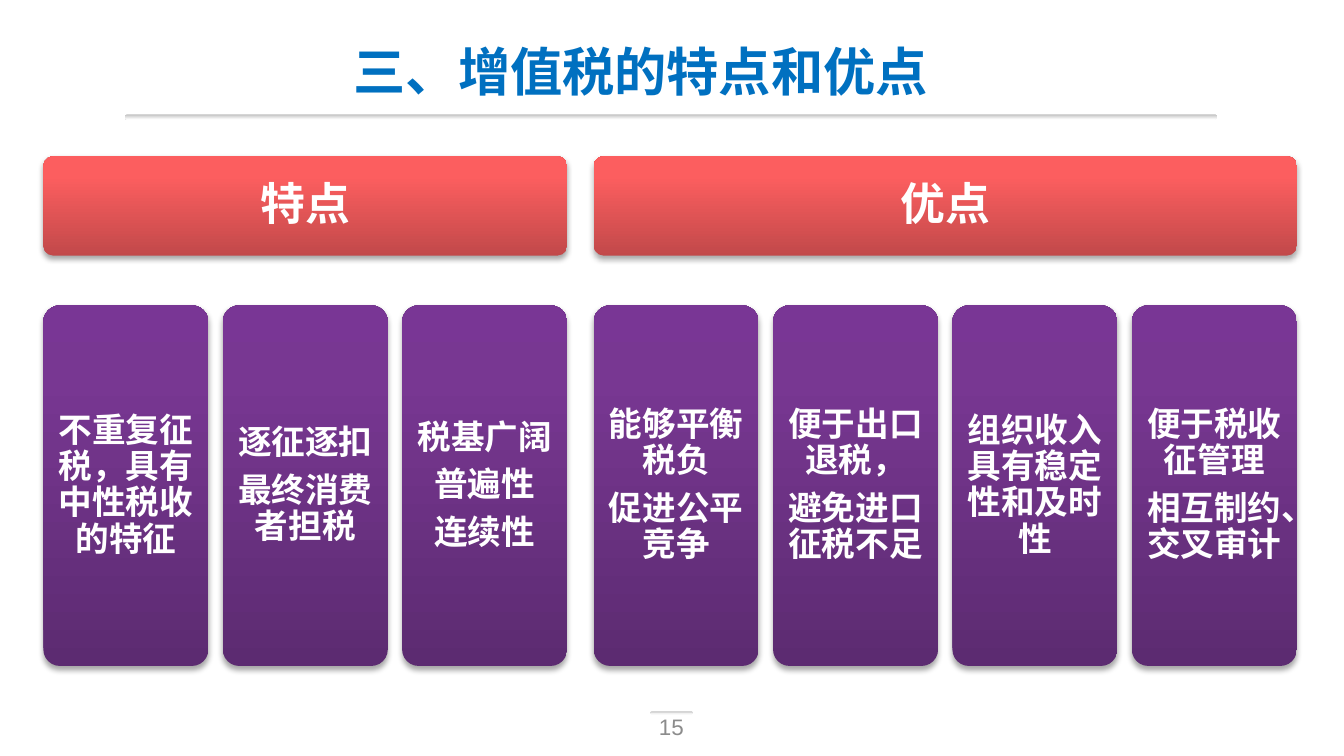
from dataclasses import dataclass

from lxml import etree
from pptx import Presentation
from pptx import util as u
from pptx.dml.color import RGBColor
from pptx.enum import shapes, text
from pptx.oxml import ns

Cm, Pt = u.Cm, u.Pt

BLUE = RGBColor(0x00, 0x70, 0xC0)
WHITE = RGBColor(0xFF, 0xFF, 0xFF)
GREY = RGBColor(0x8C, 0x8C, 0x8C)
BLACK = RGBColor(0x00, 0x00, 0x00)
RULE_GREY = RGBColor(0xBF, 0xBF, 0xBF)
RED_STOPS = ((0, RGBColor(0xC2, 0x49, 0x4A)), (80, RGBColor(0xFC, 0x5E, 0x5F)),
             (100, RGBColor(0xFF, 0x5D, 0x5E)))
PURPLE_STOPS = ((0, RGBColor(0x5C, 0x2B, 0x71)), (80, RGBColor(0x78, 0x37, 0x92)),
                (100, RGBColor(0x79, 0x36, 0x95)))
RULE_STOPS = ((0, RULE_GREY), (100, WHITE))
UPWARD, DOWNWARD = 270, 90

CARD_FONT = "Noto Sans CJK SC"
PLAIN_FONT = "Arial"

# Grid in centimetres
LEFT, GROUP_GAP = 0.82, 0.5
CARD_WIDTH, CARD_GAP = 3.12, 0.27
HEADER_TOP, HEADER_HEIGHT = 2.95, 1.88
CARD_TOP, CARD_HEIGHT = 5.77, 6.81


@dataclass
class Box:
    left: float
    top: float
    width: float
    height: float

    def lengths(self) -> tuple:
        return Cm(self.left), Cm(self.top), Cm(self.width), Cm(self.height)


@dataclass
class TextStyle:
    size: int
    color: RGBColor
    font: str = PLAIN_FONT
    bold: bool = False
    line_spacing: float = 1.0
    space_after: float = 0


@dataclass
class Group:
    header: str
    cards: list


HEADER_STYLE = TextStyle(24, WHITE, CARD_FONT, True, 0.9)
CARD_STYLE = TextStyle(18, WHITE, CARD_FONT, True, 0.9, 6)

GROUPS = [
    Group("特点", [
        ["不重复征税，具有中性税收的特征"],
        ["逐征逐扣", "最终消费者担税"],
        ["税基广阔", "普遍性", "连续性"],
    ]),
    Group("优点", [
        ["能够平衡税负", "促进公平竞争"],
        ["便于出口退税，", "避免进口征税不足"],
        ["组织收入具有稳定性和及时性"],
        ["便于税收征管理", "相互制约、交叉审计"],
    ]),
]


def add_element(parent, tag: str, **attributes):
    return etree.SubElement(parent, ns.qn(tag), {k: str(v) for k, v in attributes.items()})


def set_gradient(shape, stops: tuple, angle: int) -> None:
    shape.fill.gradient()
    gradient = shape._element.spPr.find(ns.qn("a:gradFill"))
    for child in list(gradient):
        gradient.remove(child)
    stop_list = add_element(gradient, "a:gsLst")
    for position, color in stops:
        stop = add_element(stop_list, "a:gs", pos=position * 1000)
        add_element(stop, "a:srgbClr", val=color)
    add_element(gradient, "a:lin", ang=angle * 60000, scaled=0)


def add_shadow(shape) -> None:
    effects = shape._element.spPr.find(ns.qn("a:effectLst"))
    shadow = add_element(effects, "a:outerShdw", blurRad=Pt(3.1), dist=Pt(1.8),
                         dir=90 * 60000, rotWithShape=0)
    color = add_element(shadow, "a:srgbClr", val=BLACK)
    add_element(color, "a:alpha", val=35000)


def add_round_box(slide, box: Box, stops: tuple, angle: int, corner: float):
    shape = slide.shapes.add_shape(shapes.MSO_SHAPE.ROUNDED_RECTANGLE, *box.lengths())
    shape.adjustments[0] = corner
    shape.shadow.inherit = False
    shape.line.fill.background()
    set_gradient(shape, stops, angle)
    return shape


def write_text(shape, lines: list, style: TextStyle, anchor, inset_x: float, inset_y: float) -> None:
    frame = shape.text_frame
    frame.word_wrap = True
    frame.vertical_anchor = anchor
    frame.margin_left = frame.margin_right = Cm(inset_x)
    frame.margin_top = frame.margin_bottom = Cm(inset_y)
    for index, line in enumerate(lines):
        paragraph = frame.add_paragraph() if index else frame.paragraphs[0]
        paragraph.alignment = text.PP_ALIGN.CENTER
        paragraph.line_spacing = style.line_spacing
        paragraph.space_after = Pt(style.space_after)
        run = paragraph.add_run()
        run.text = line
        run.font.size = Pt(style.size)
        run.font.bold = style.bold
        run.font.color.rgb = style.color
        run.font.name = style.font
        add_element(run.font._element, "a:ea", typeface=CARD_FONT)


def add_label(slide, box: Box, line: str, style: TextStyle, anchor) -> None:
    label = slide.shapes.add_textbox(*box.lengths())
    write_text(label, [line], style, anchor, 0.18, 0.1)


def add_panel(slide, box: Box, stops: tuple, lines: list, style: TextStyle, inset: float) -> None:
    panel = add_round_box(slide, box, stops, UPWARD, 0.1)
    add_shadow(panel)
    write_text(panel, lines, style, text.MSO_ANCHOR.MIDDLE, inset, inset)


def add_group(slide, group: Group, left: float) -> float:
    """Draw a header over its cards and return the group's width."""
    pitch = CARD_WIDTH + CARD_GAP
    width = len(group.cards) * pitch - CARD_GAP
    add_panel(slide, Box(left, HEADER_TOP, width, HEADER_HEIGHT), RED_STOPS,
              [group.header], HEADER_STYLE, 0.25)
    for index, lines in enumerate(group.cards):
        box = Box(left + index * pitch, CARD_TOP, CARD_WIDTH, CARD_HEIGHT)
        add_panel(slide, box, PURPLE_STOPS, lines, CARD_STYLE, 0.18)
    return width


def main() -> None:
    presentation = Presentation()
    presentation.slide_width, presentation.slide_height = Cm(25.4), Cm(14.28)
    slide = presentation.slides.add_slide(presentation.slide_layouts[6])

    # Rules under the title and above the page number
    for box in (Box(2.36, 2.16, 20.65, 0.1), Box(12.29, 13.44, 0.81, 0.05)):
        add_round_box(slide, box, RULE_STOPS, DOWNWARD, 0.5)

    # Page number and title
    add_label(slide, Box(9.73, 13.34, 5.92, 0.76), "15",
              TextStyle(12, GREY), text.MSO_ANCHOR.MIDDLE)
    add_label(slide, Box(3.51, 0.64, 17.2, 1.4), "三、增值税的特点和优点",
              TextStyle(28, BLUE, bold=True), text.MSO_ANCHOR.TOP)

    # Headers with their cards
    left = LEFT
    for group in GROUPS:
        left += add_group(slide, group, left) + GROUP_GAP

    presentation.save("out.pptx")


if __name__ == "__main__":
    main()
